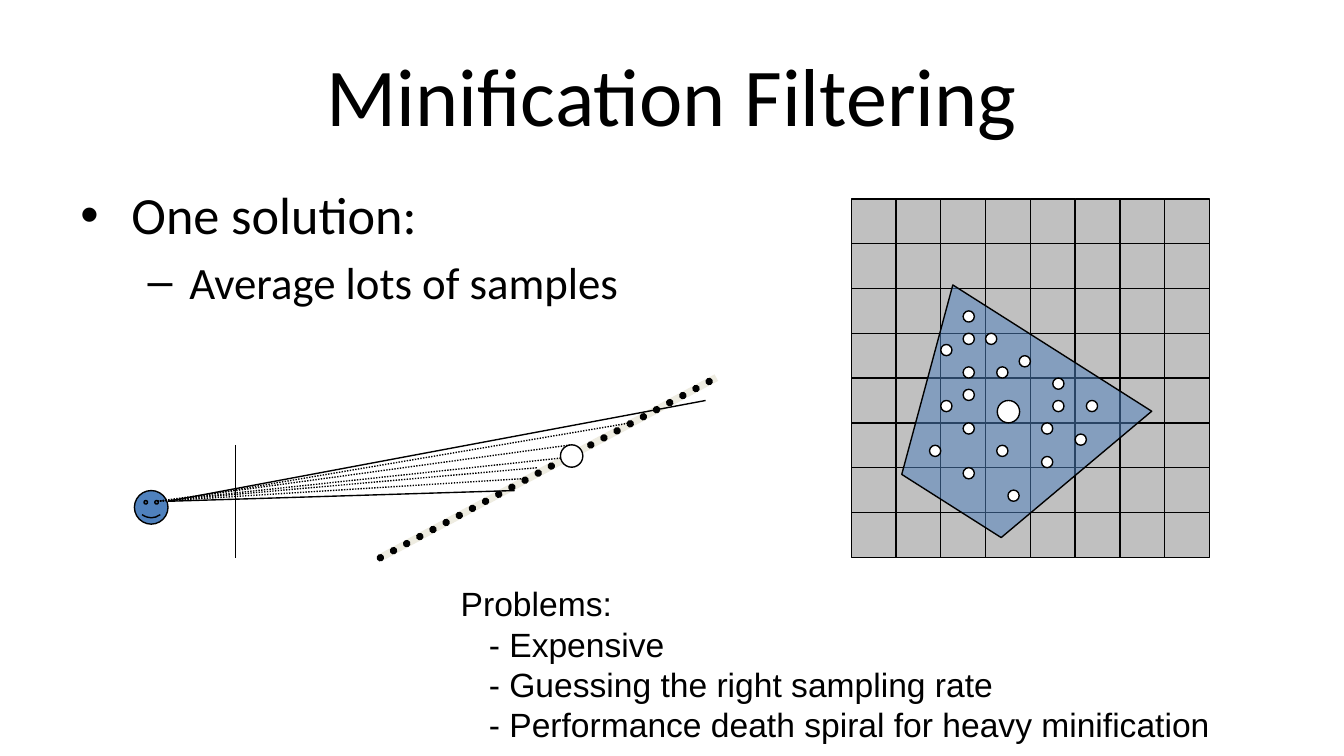
from itertools import product

from lxml import etree
from pptx import Presentation
from pptx.dml.color import RGBColor
from pptx.enum.dml import MSO_LINE
from pptx.enum.shapes import MSO_CONNECTOR, MSO_SHAPE
from pptx.enum.text import MSO_ANCHOR, PP_ALIGN
from pptx.oxml.ns import qn
from pptx.util import Inches, Pt

STRAIGHT = MSO_CONNECTOR.STRAIGHT
DOTTED = MSO_LINE.ROUND_DOT
RECTANGLE, OVAL, SMILEY = MSO_SHAPE.RECTANGLE, MSO_SHAPE.OVAL, MSO_SHAPE.SMILEY_FACE
TOP, MIDDLE = MSO_ANCHOR.TOP, MSO_ANCHOR.MIDDLE
LEFT, CENTER = PP_ALIGN.LEFT, PP_ALIGN.CENTER

BLACK = RGBColor(0x00, 0x00, 0x00)
WHITE = RGBColor(0xFF, 0xFF, 0xFF)
GRAY = RGBColor(0xC0, 0xC0, 0xC0)
BLUE = RGBColor(0x4F, 0x81, 0xBD)
BEIGE = RGBColor(0xEE, 0xEC, 0xE1)

GRID_COUNT, CELL = 8, 1 / 3
GRID_LEFT, GRID_TOP = 19 * CELL, 1.48
SAMPLE = CELL / 4
SAMPLES = [
    (10, 10), (12, 12), (10, 12), (8, 13), (10, 15), (15, 14), (18, 16),
    (13, 15), (10, 20), (10, 17), (8, 18), (7, 22), (13, 22), (17, 20),
    (18, 18), (20, 21), (17, 23), (14, 26), (10, 24), (21, 18),
]
FOOTPRINT = [(7.09, 2.12), (6.71, 3.53), (7.45, 4), (8.57, 3.06)]

EYE_CENTER, EYE_EDGE = (1.17, 3.73), (1.25, 3.73)
SURFACE = (2.83, 4.15), (5.33, 2.81)
DOTTED_RAYS = [
    (EYE_CENTER, (4.25, 3.4)),
    (EYE_CENTER, (4.25, 3.31)),
    (EYE_EDGE, (4.67, 3.15)),
    (EYE_CENTER, (4, 3.48)),
    (EYE_CENTER, (3.92, 3.56)),
]
SOLID_LINES = [
    ((1.75, 3.31), (1.75, 4.15)),
    (EYE_EDGE, (5.25, 2.98)),
    (EYE_EDGE, (3.83, 3.65)),
]
PROBLEMS = [
    "Problems:",
    "- Expensive",
    "- Guessing the right sampling rate",
    "- Performance death spiral for heavy minification",
]


def add_line(slide, start, end, color=BLACK, width=0.75, dash=None):
    """Draw a straight line between two points given in inches."""
    ends = [Inches(value) for value in (*start, *end)]
    connector = slide.shapes.add_connector(STRAIGHT, *ends)
    connector.line.color.rgb = color
    connector.line.width = Pt(width)
    if dash:
        connector.line.dash_style = dash
        connector.line._get_or_add_ln().set("cap", "rnd" if width > 1 else "flat")
    etree.SubElement(connector._element.spPr, qn("a:effectLst"))


def style_shape(shape, fill):
    """Give a shape a solid fill and a thin black outline."""
    shape.shadow.inherit = False
    shape.fill.solid()
    shape.fill.fore_color.rgb = fill
    shape.line.color.rgb = BLACK
    shape.line.width = Pt(0.75)


def add_square_shape(slide, kind, left, top, size, fill=WHITE):
    """Add a preset shape as wide as it is high."""
    box = [Inches(value) for value in (left, top, size, size)]
    shape = slide.shapes.add_shape(kind, *box)
    style_shape(shape, fill)
    return shape


def add_polygon(slide, points, fill, opacity):
    """Add a closed translucent polygon."""
    corners = [(Inches(x), Inches(y)) for x, y in points]
    builder = slide.shapes.build_freeform(*corners[0])
    builder.add_line_segments(corners[1:], close=True)
    shape = builder.convert_to_shape()
    style_shape(shape, fill)
    color = shape._element.spPr.find(qn("a:solidFill"))[0]
    etree.SubElement(color, qn("a:alpha"), val=str(opacity * 1000))


def place(shape, left, top, width, height, anchor=TOP):
    """Set the position of a text shape and return its wrapped frame."""
    shape.left, shape.top = Inches(left), Inches(top)
    shape.width, shape.height = Inches(width), Inches(height)
    frame = shape.text_frame
    frame.word_wrap = True
    frame.vertical_anchor = anchor
    return frame


def write_paragraph(frame, text, *, size, font="Calibri", align=LEFT, bullet=None,
                    margin=0, indent=0, before=0, spacing=None):
    """Write text in the empty first paragraph or in a new one."""
    first = frame.paragraphs[0]
    paragraph = frame.add_paragraph() if first.runs else first
    paragraph.text = text
    paragraph.alignment = align
    paragraph.space_before = Pt(before)
    if spacing:
        paragraph.line_spacing = Pt(spacing)
    for run in paragraph.runs:
        run.font.name = font
        run.font.size = Pt(size)
        run.font.color.rgb = BLACK
    properties = paragraph._p.get_or_add_pPr()
    properties.set("marL", str(Inches(margin)))
    properties.set("indent", str(Inches(indent)))
    if bullet:
        etree.SubElement(properties, qn("a:buFont"), typeface="Arial")
        etree.SubElement(properties, qn("a:buChar"), char=bullet)
    return paragraph


def add_texts(slide):
    """Write the title, the bullet list and the list of problems."""
    title = place(slide.shapes.title, 0.5, 0.23, 9, 0.94, MIDDLE)
    write_paragraph(title, "Minification Filtering", size=44, align=CENTER)

    body = place(slide.shapes.add_textbox(0, 0, 0, 0), 0.5, 1.31, 4.42, 3.71)
    write_paragraph(body, "One solution:", size=28, bullet="•",
                    margin=0.38, indent=-0.38, before=5.6)
    samples = write_paragraph(body, "Average lots of samples", size=24, bullet="–",
                              margin=0.81, indent=-0.31, before=4.8)
    samples.level = 1

    problems = place(slide.shapes.add_textbox(0, 0, 0, 0), 3.33, 4.29, 6.33, 1.3)
    write_paragraph(problems, "\v".join(PROBLEMS), size=18, font="Arial",
                    margin=0.21, indent=-0.21, spacing=21.6)


def add_view_diagram(slide):
    """Draw the eye, the screen and the rays that meet the surface."""
    add_line(slide, *SURFACE, color=BEIGE, width=4)
    eye = add_square_shape(slide, SMILEY, 1, 3.65, 0.25, BLUE)
    eye.adjustments[0] = 0.05
    add_line(slide, *SURFACE, width=4, dash=DOTTED)
    for start, end in SOLID_LINES:
        add_line(slide, start, end)
    for start, end in DOTTED_RAYS:
        add_line(slide, start, end, dash=DOTTED)
    add_square_shape(slide, OVAL, 4.17, 3.31, 2 * SAMPLE)


def add_texture_diagram(slide):
    """Draw the texel grid, the pixel footprint and its samples."""
    for row, column in product(range(GRID_COUNT), repeat=2):
        add_square_shape(slide, RECTANGLE, GRID_LEFT + column * CELL,
                         GRID_TOP + row * CELL, CELL, GRAY)
    add_polygon(slide, FOOTPRINT, BLUE, 53)
    add_square_shape(slide, OVAL, 7.42, 2.98, 2 * SAMPLE)
    for column, row in SAMPLES:
        add_square_shape(slide, OVAL, GRID_LEFT + column * SAMPLE,
                         GRID_TOP + row * SAMPLE, SAMPLE)


def main():
    """Build the slide and save the presentation."""
    presentation = Presentation()
    presentation.slide_width = Inches(10)
    presentation.slide_height = Inches(10 * 9 / 16)
    slide = presentation.slides.add_slide(presentation.slide_layouts[5])
    add_texts(slide)
    add_view_diagram(slide)
    add_texture_diagram(slide)
    presentation.save("out.pptx")


if __name__ == "__main__":
    main()
